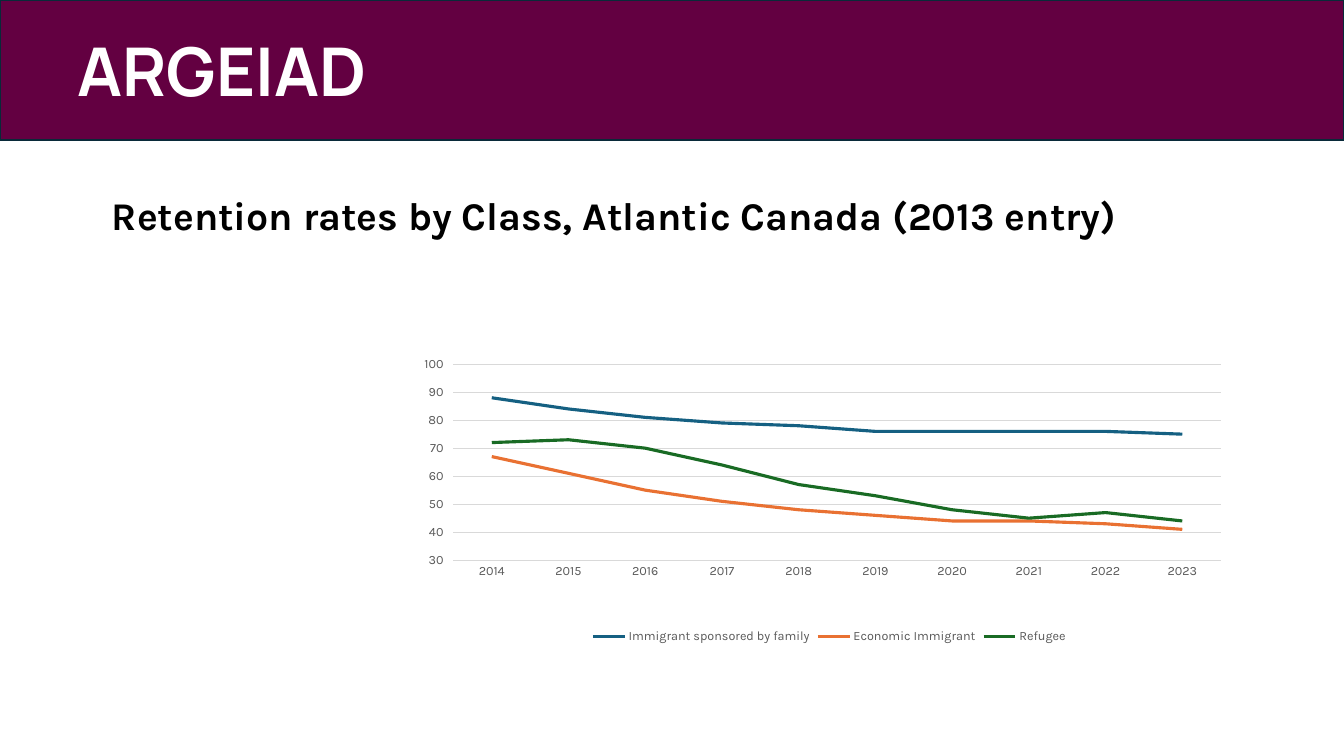
from lxml.etree import SubElement
from pptx import Presentation
from pptx.chart.data import CategoryChartData
from pptx.dml.color import RGBColor
from pptx.enum.chart import XL_CHART_TYPE, XL_LEGEND_POSITION, XL_TICK_MARK
from pptx.enum.shapes import MSO_SHAPE
from pptx.enum.text import MSO_ANCHOR, PP_ALIGN
from pptx.oxml.ns import qn
from pptx.util import Inches, Pt

COLORS = {
    "banner": "630041",
    "banner_line": "092A39",
    "white": "FFFFFF",
    "black": "000000",
    "label": "595959",
    "grid": "D9D9D9",
    "family": "156082",
    "economic": "E97132",
    "refugee": "196B24",
}
YEARS = [str(year) for year in range(2014, 2024)]
RETENTION = [
    ("Immigrant sponsored by family", "family", [88, 84, 81, 79, 78, 76, 76, 76, 76, 75]),
    ("Economic Immigrant", "economic", [67, 61, 55, 51, 48, 46, 44, 44, 43, 41]),
    ("Refugee", "refugee", [72, 73, 70, 64, 57, 53, 48, 45, 47, 44]),
]
PLOT_LAYOUT = {"x": 0.065, "y": 0.224, "w": 0.888, "h": 0.536}


def color(name):
    return RGBColor.from_string(COLORS[name])


def set_attributes(target, values):
    for name, value in values.items():
        setattr(target, name, value)


def format_font(font, name, size, color_name, bold=False):
    set_attributes(font, {"name": name, "size": Pt(size), "bold": bold})
    font.color.rgb = color(color_name)


def format_line(line, color_name, width):
    line.color.rgb = color(color_name)
    line.width = Pt(width)


def fill_text(shape, text, left_margin, font_values):
    frame = shape.text_frame
    set_attributes(frame, {
        "text": text,
        "word_wrap": True,
        "vertical_anchor": MSO_ANCHOR.MIDDLE,
        "margin_left": Inches(left_margin),
    })
    paragraph = frame.paragraphs[0]
    paragraph.alignment = PP_ALIGN.LEFT
    format_font(paragraph.runs[0].font, **font_values)
    return paragraph


def add_banner(slide, width):
    banner = slide.shapes.add_shape(MSO_SHAPE.RECTANGLE, 0, 0, width, Inches(1.39))
    banner.shadow.inherit = False
    banner.fill.solid()
    banner.fill.fore_color.rgb = color("banner")
    format_line(banner.line, "banner_line", 1.5)
    fill_text(banner, "ARGEIAD", 0.77,
              {"name": "Manrope", "size": 48, "color_name": "white", "bold": True})


def place_title(slide):
    title = slide.shapes.title
    set_attributes(title, {"left": Inches(1.01), "top": Inches(1.44),
                           "width": Inches(11.5), "height": Inches(1.45)})
    paragraph = fill_text(title, "Retention rates by Class, Atlantic Canada (2013 entry)", 0.1,
                          {"name": "Karla", "size": 28, "color_name": "black", "bold": True})
    paragraph.line_spacing = 0.9


def set_plot_layout(chart):
    """Fix the inner plot area as fractions of the chart."""
    plot_area = chart._chartSpace.chart.plotArea
    layout = plot_area.find(qn("c:layout"))
    if layout is None:
        layout = SubElement(plot_area, qn("c:layout"))
        plot_area.insert(0, layout)
    manual = SubElement(layout, qn("c:manualLayout"))
    settings = {"layoutTarget": "inner", "xMode": "edge", "yMode": "edge", **PLOT_LAYOUT}
    for name, value in settings.items():
        SubElement(manual, qn(f"c:{name}")).set("val", str(value))


def format_axes(chart):
    years, rates = chart.category_axis, chart.value_axis
    set_attributes(years, {"major_tick_mark": XL_TICK_MARK.NONE, "has_major_gridlines": False})
    set_attributes(rates, {"major_tick_mark": XL_TICK_MARK.OUTSIDE, "has_major_gridlines": True,
                           "minimum_scale": 30, "maximum_scale": 100, "major_unit": 10})
    for axis in (years, rates):
        axis.minor_tick_mark = XL_TICK_MARK.NONE
        format_font(axis.tick_labels.font, "Karla", 9, "label")
    format_line(years.format.line, "grid", 0.75)
    format_line(rates.major_gridlines.format.line, "grid", 0.75)
    rates.format.line.fill.background()


def add_retention_chart(slide):
    data = CategoryChartData(number_format="0")
    data.categories = YEARS
    for name, _, values in RETENTION:
        data.add_series(name, values)
    chart = slide.shapes.add_chart(XL_CHART_TYPE.LINE, Inches(3.94), Inches(2.8),
                                   Inches(8.57), Inches(3.63), data).chart
    set_attributes(chart, {"has_title": False, "has_legend": True})
    format_font(chart.font, "Karla", 10, "black")
    set_attributes(chart.legend, {"position": XL_LEGEND_POSITION.BOTTOM,
                                  "include_in_layout": False})
    format_font(chart.legend.font, "Karla", 9, "label")
    plot = chart.plots[0]
    plot.vary_by_categories = False
    for series, (_, color_name, _) in zip(plot.series, RETENTION):
        series.smooth = False
        format_line(series.format.line, color_name, 2.25)
    format_axes(chart)
    set_plot_layout(chart)


def main():
    presentation = Presentation()
    set_attributes(presentation, {"slide_width": Inches(13.33), "slide_height": Inches(7.5)})
    slide = presentation.slides.add_slide(presentation.slide_layouts.get_by_name("Title Only"))
    add_banner(slide, presentation.slide_width)
    place_title(slide)
    add_retention_chart(slide)
    presentation.save("out.pptx")


if __name__ == "__main__":
    main()
